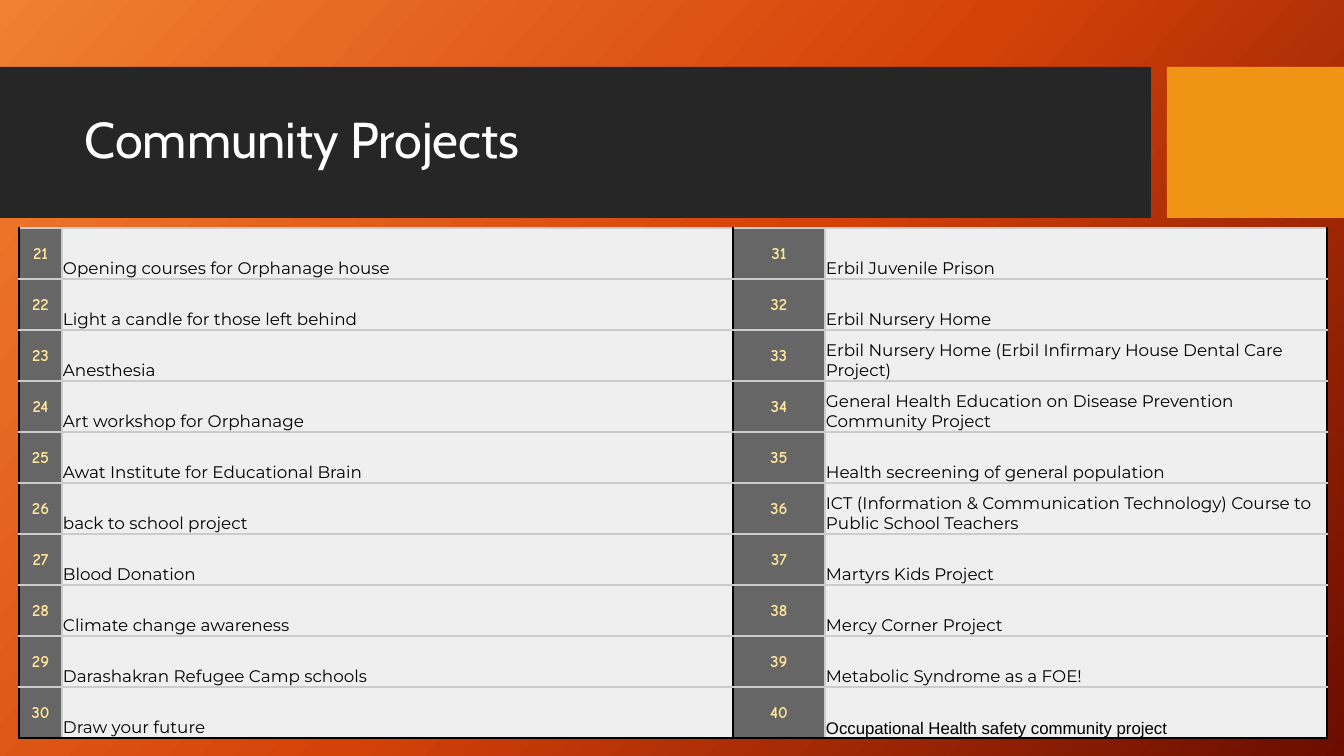
from lxml import etree
from pptx import Presentation
from pptx import util as u
from pptx.dml.color import RGBColor
from pptx.enum import shapes, text
from pptx.oxml.ns import qn

PX = 12192000 / 1344  # EMU in one px

PROJECTS = [
    ("Opening courses for Orphanage house", "Erbil Juvenile Prison"),
    ("Light a candle for those left behind", "Erbil Nursery Home"),
    ("Anesthesia", "Erbil Nursery Home (Erbil Infirmary House Dental Care Project)"),
    ("Art workshop for Orphanage",
     "General Health Education on Disease Prevention Community Project"),
    ("Awat Institute for Educational Brain", "Health secreening of general population"),
    ("back to school project",
     "ICT (Information & Communication Technology) Course to Public School Teachers"),
    ("Blood Donation", "Martyrs Kids Project"),
    ("Climate change awareness", "Mercy Corner Project"),
    ("Darashakran Refugee Camp schools", "Metabolic Syndrome as a FOE!"),
    ("Draw your future", "Occupational Health safety community project"),
]
FIRST_NUMBERS = (21, 31)


def px(length):
    return u.Emu(round(length * PX))


def color(value):
    return RGBColor.from_string(value)


class ProjectSlide:
    black, rule, white = "000000", "CCCCCC", "FFFFFF"
    number_fill, number_color, text_fill = "666666", "FFE599", "EFEFEF"

    def __init__(self, presentation):
        self.slide = presentation.slides.add_slide(presentation.slide_layouts[6])

    def background(self, stops, angle):
        fill = self.slide.background.fill
        fill.gradient()
        fill.gradient_angle = 360 - angle
        stop_list = next(self.slide.element.iter(qn("a:gsLst")))
        for stop in list(stop_list):
            stop_list.remove(stop)
        for percent, value in stops:
            stop = etree.SubElement(stop_list, qn("a:gs"), pos=str(percent * 1000))
            etree.SubElement(stop, qn("a:srgbClr"), val=value)

    def rectangle(self, left, top, width, height, fill):
        shape = self.slide.shapes.add_shape(
            shapes.MSO_SHAPE.RECTANGLE, px(left), px(top), px(width), px(height))
        shape.shadow.inherit = False
        shape.fill.solid()
        shape.fill.fore_color.rgb = color(fill)
        shape.line.fill.background()

    def format(self, paragraph, font, size, value, bold=False):
        for run in paragraph.runs:
            run.font.name, run.font.size, run.font.bold = font, u.Pt(size), bold
            run.font.color.rgb = color(value)

    def title(self, left, top, width, height, words):
        shape = self.slide.shapes.add_textbox(px(left), px(top), px(width), px(height))
        frame = shape.text_frame
        frame.word_wrap = True
        frame.vertical_anchor = text.MSO_ANCHOR.MIDDLE
        frame.text = words
        frame.paragraphs[0].line_spacing = 0.9
        self.format(frame.paragraphs[0], "Cabin", 36, self.white)

    def borders(self, cell, **sides):
        properties = cell._tc.get_or_add_tcPr()
        for side, value in sides.items():
            line = etree.SubElement(properties, qn(f"a:ln{side}"), w=str(u.Pt(1)))
            fill = etree.SubElement(line, qn("a:solidFill"))
            etree.SubElement(fill, qn("a:srgbClr"), val=value)

    def cell(self, cell, words, is_number, is_last, font):
        # Borders go in ahead of the fill
        self.borders(cell, L=self.black if is_number else self.rule,
                     R=self.rule if is_number else self.black,
                     T=self.rule, B=self.black if is_last else self.rule)
        cell.fill.solid()
        cell.fill.fore_color.rgb = color(self.number_fill if is_number else self.text_fill)
        cell.margin_left = cell.margin_right = cell.margin_top = px(1)
        cell.margin_bottom = 0
        cell.text_frame.text = words
        paragraph = cell.text_frame.paragraphs[0]
        if is_number:
            cell.vertical_anchor = text.MSO_ANCHOR.MIDDLE
            paragraph.alignment = text.PP_ALIGN.CENTER
            self.format(paragraph, "Comic Neue", 12, self.number_color, bold=True)
        else:
            cell.vertical_anchor = text.MSO_ANCHOR.BOTTOM
            self.format(paragraph, font, 12, self.black)

    def table(self, left, top, widths, row_height, projects):
        count = len(projects)
        table = self.slide.shapes.add_table(
            count, len(widths), px(left), px(top),
            px(sum(widths)), px(row_height * count)).table
        table.first_row = table.horz_banding = False
        for column, width in zip(table.columns, widths):
            column.width = px(width)
        for index, names in enumerate(projects):
            table.rows[index].height = px(row_height)
            is_last = index == count - 1
            for side, name in enumerate(names):
                font = "Arial" if is_last and side == 1 else "Montserrat"
                number = str(FIRST_NUMBERS[side] + index)
                self.cell(table.cell(index, 2 * side), number, True, is_last, font)
                self.cell(table.cell(index, 2 * side + 1), name, False, is_last, font)


def main():
    presentation = Presentation()
    presentation.slide_width, presentation.slide_height = px(1344), px(756)
    page = ProjectSlide(presentation)

    # Background and header band
    page.background([(0, "F18031"), (50, "D54209"), (100, "6A0D00")], 42)
    page.rectangle(0, 67, 1151, 151, "262626")
    page.rectangle(1167, 67, 177, 151, "F09415")
    page.title(75, 83, 1308, 119, "Community Projects")

    # Numbered projects in two column pairs
    page.table(19, 228, (43, 671, 92, 502), 51, PROJECTS)
    presentation.save("out.pptx")


if __name__ == "__main__":
    main()
